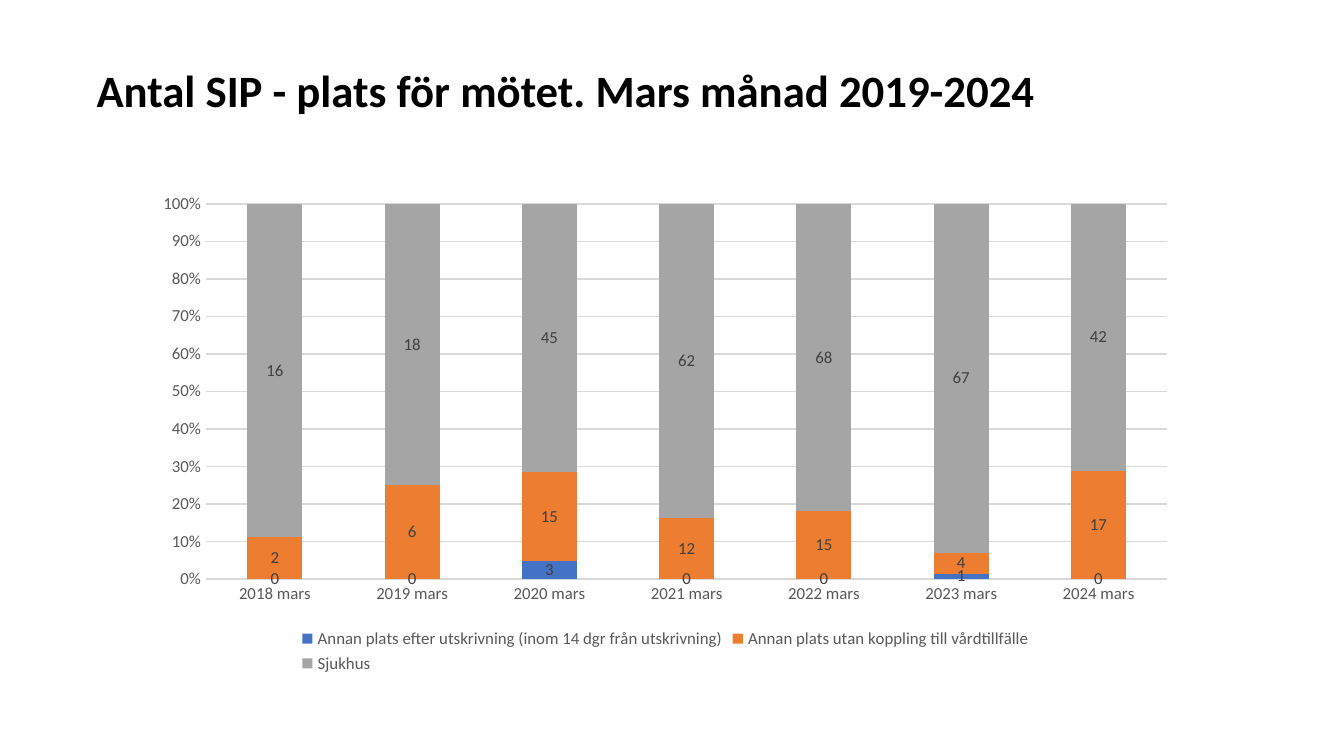
from pptx import Presentation
from pptx.chart.data import CategoryChartData
from pptx.dml.color import RGBColor
from pptx.enum.chart import XL_CHART_TYPE, XL_LABEL_POSITION, XL_LEGEND_POSITION, XL_TICK_MARK
from pptx.enum.text import MSO_ANCHOR
from pptx.util import Inches, Pt

STACK = XL_CHART_TYPE.COLUMN_STACKED_100
CENTER = XL_LABEL_POSITION.CENTER
BOTTOM = XL_LEGEND_POSITION.BOTTOM
NONE = XL_TICK_MARK.NONE
MIDDLE = MSO_ANCHOR.MIDDLE


def color(code):
    return RGBColor.from_string(code)


def style(font, size, code, bold=False):
    form = {"name": "Calibri", "size": Pt(size), "bold": bold}
    for key, val in form.items():
        setattr(font, key, val)
    font.color.rgb = color(code)


deck = Presentation()
deck.slide_width = Inches(10)
deck.slide_height = Inches(10) * 9 // 16
slide = deck.slides.add_slide(deck.slide_layouts[6])

box = slide.shapes.add_textbox(Inches(0.62), Inches(0.41), Inches(7.85), Inches(0.56))
frame = box.text_frame
frame.word_wrap = True
frame.vertical_anchor = MIDDLE
para = frame.paragraphs[0]
para.line_spacing = 0.9
run = para.add_run()
run.text = "Antal SIP - plats för mötet. Mars månad 2019-2024"
style(run.font, 24, "000000", True)

rows = [
    ("Annan plats efter utskrivning (inom 14 dgr från utskrivning)",
     [0, 0, 3, 0, 0, 1, 0], "4472C4"),
    ("Annan plats utan koppling till vårdtillfälle",
     [2, 6, 15, 12, 15, 4, 17], "ED7D31"),
    ("Sjukhus ", [16, 18, 45, 62, 68, 67, 42], "A5A5A5"),
]
data = CategoryChartData()
data.categories = [f"{year} mars" for year in range(2018, 2025)]
for name, vals, code in rows:
    data.add_series(name, vals)

chart = slide.shapes.add_chart(
    STACK, Inches(1.06), Inches(1.37), Inches(7.78), Inches(3.68), data
).chart
style(chart.font, 10, "000000")
chart.has_title = False
chart.has_legend = True
legend = chart.legend
legend.position = BOTTOM
legend.include_in_layout = False
style(legend.font, 9, "595959")

plot = chart.plots[0]
for key, val in {"gap_width": 150, "overlap": 100, "vary_by_categories": False}.items():
    setattr(plot, key, val)

for bar, (name, vals, code) in zip(plot.series, rows):
    bar.format.fill.solid()
    bar.format.fill.fore_color.rgb = color(code)
    labels = bar.data_labels
    for key, val in {"show_value": True, "position": CENTER}.items():
        setattr(labels, key, val)
    style(labels.font, 9, "404040")

cat, scale = chart.category_axis, chart.value_axis
for axis in (cat, scale):
    for key, val in {"major_tick_mark": NONE, "minor_tick_mark": NONE}.items():
        setattr(axis, key, val)
    style(axis.tick_labels.font, 9, "595959")

scale.has_major_gridlines = True
scale.format.line.fill.background()
for key, val in {"minimum_scale": 0, "maximum_scale": 1, "major_unit": 0.1}.items():
    setattr(scale, key, val)
for key, val in {"number_format": "0%", "number_format_is_linked": False}.items():
    setattr(scale.tick_labels, key, val)
for line in (cat.format.line, scale.major_gridlines.format.line):
    line.color.rgb = color("D9D9D9")
    line.width = Pt(0.75)

deck.save("out.pptx")
